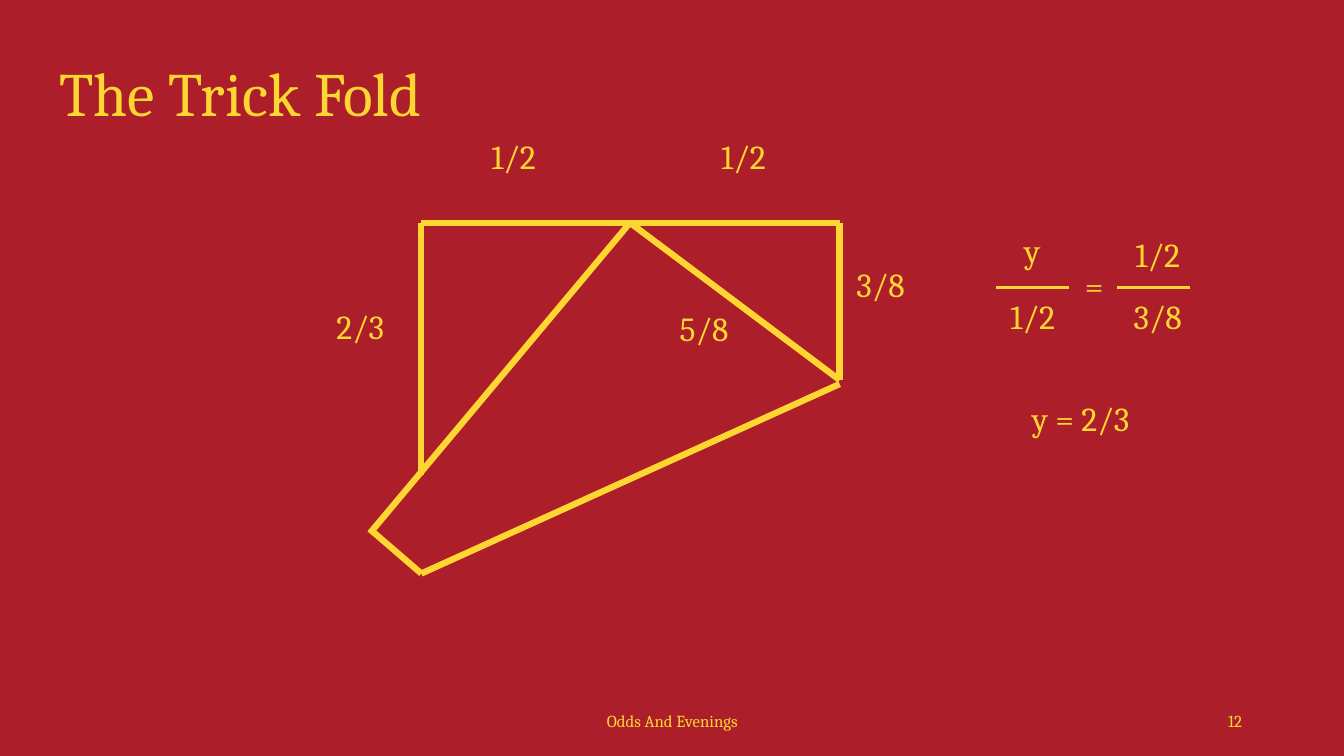
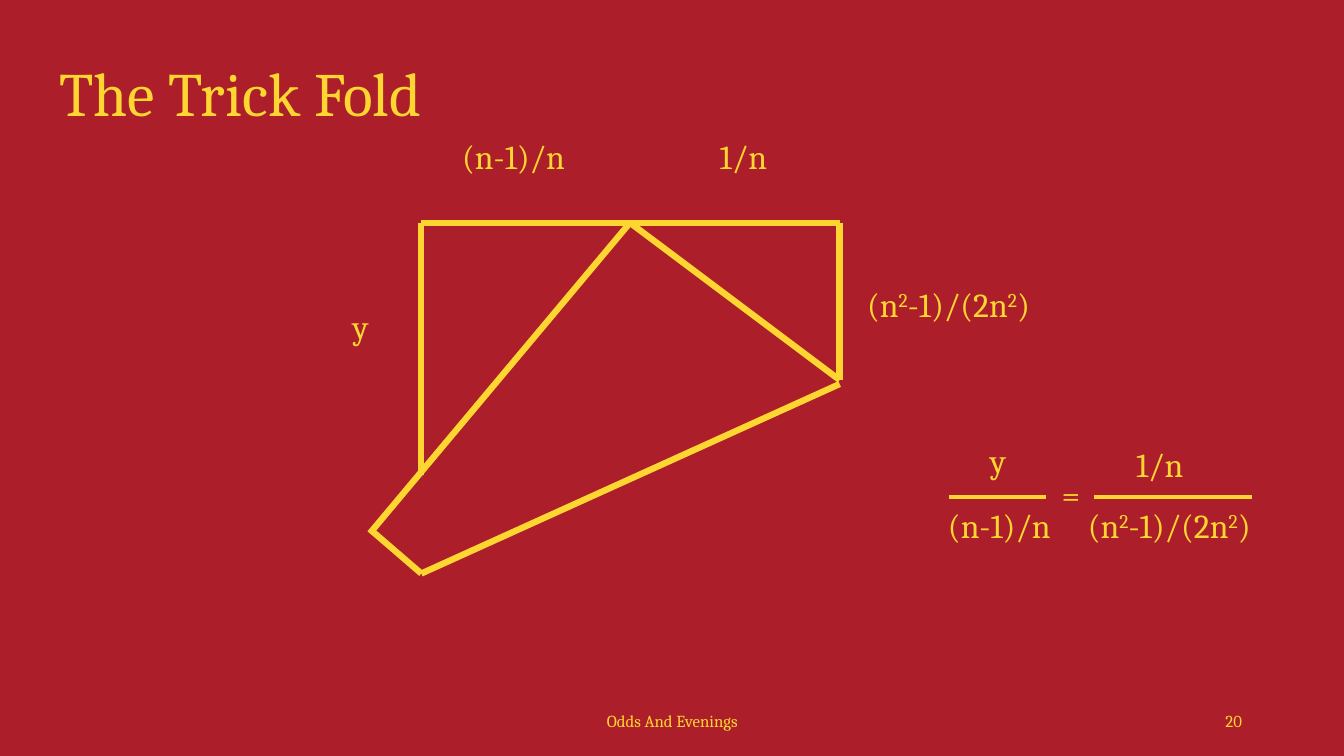
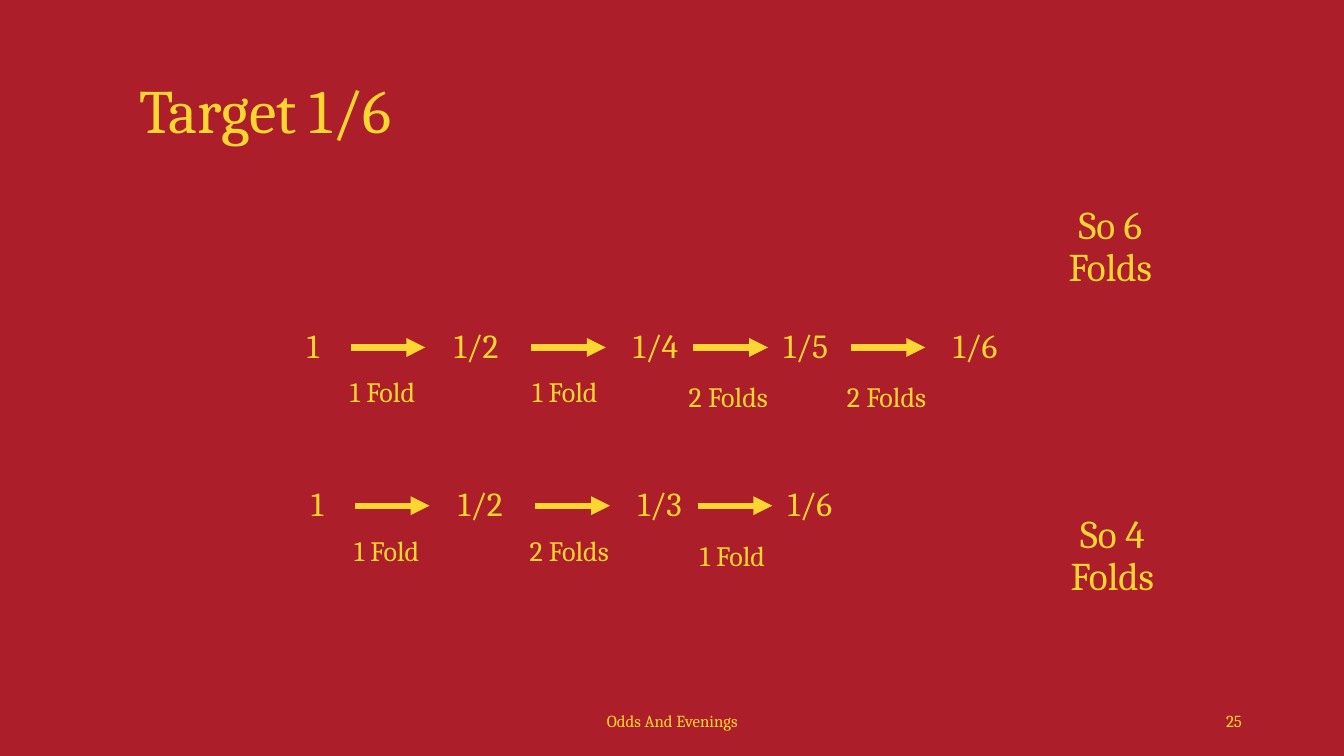
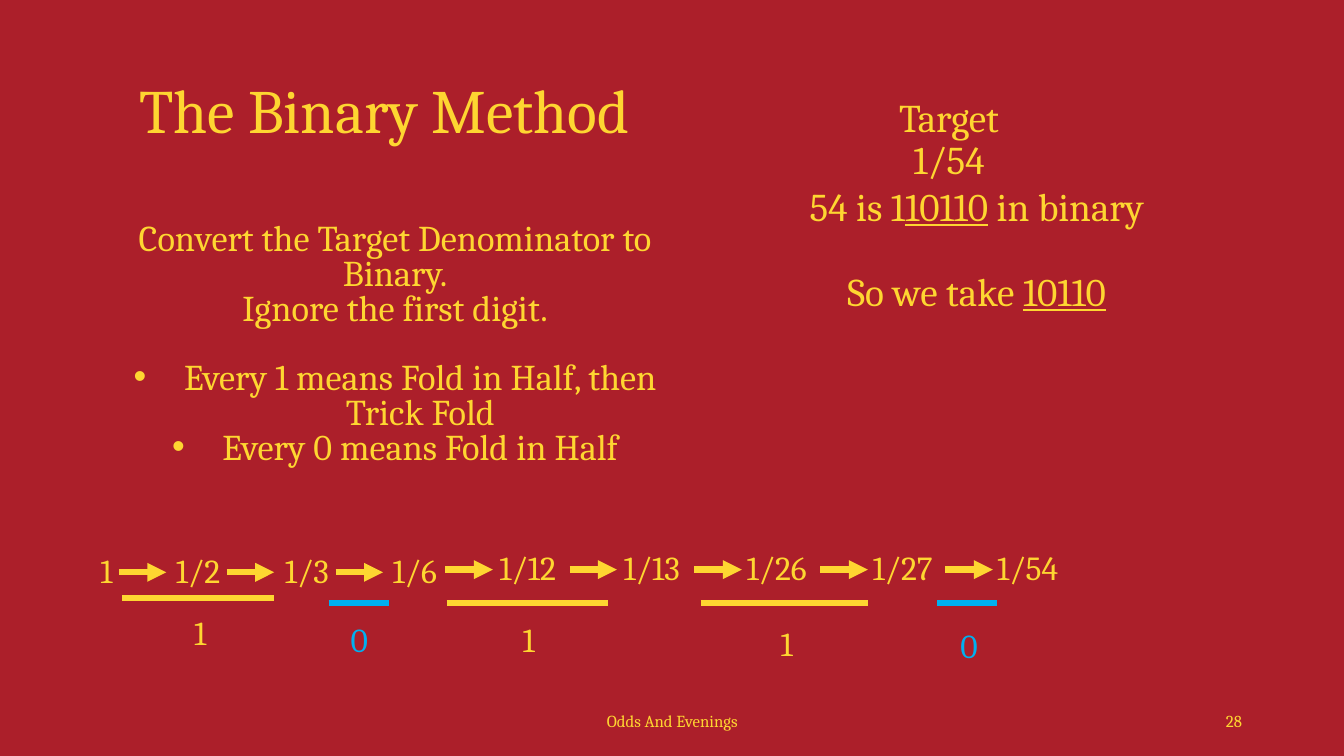
from dataclasses import dataclass
from typing import Any, NamedTuple

from lxml.etree import SubElement
from pptx import Presentation
from pptx.dml.color import RGBColor
from pptx.enum.shapes import MSO_CONNECTOR
from pptx.enum.text import MSO_ANCHOR, PP_ALIGN
from pptx.oxml.ns import qn
from pptx.slide import Slide
from pptx.text.text import TextFrame
from pptx.util import Pt


@dataclass(frozen=True)
class Theme:
    """Colours, font, type sizes and line weights of the deck."""

    background: RGBColor = RGBColor(0xAC, 0x1F, 0x2A)
    gold: RGBColor = RGBColor(0xFE, 0xD6, 0x31)
    blue: RGBColor = RGBColor(0x00, 0xB0, 0xF0)
    font: str = "Cambria"
    title: float = 44
    statement: float = 28
    rules: float = 25.9
    label: float = 24
    caption: float = 20
    footer: float = 12
    heavy: float = 4.5
    thin: float = 2.25


THEME = Theme()


class Box(NamedTuple):
    """A rectangle in points."""

    left: float
    top: float
    width: float
    height: float


class Run(NamedTuple):
    """A piece of text in one style."""

    text: str
    underline: bool = False
    superscript: bool = False


@dataclass(frozen=True)
class Line:
    """A paragraph with its spacing and bullet."""

    runs: tuple[Run, ...]
    space_before: float = 0
    bullet: bool = False


@dataclass(frozen=True)
class Style:
    """How a block of text is set."""

    size: float = THEME.label
    color: RGBColor = THEME.gold
    align: PP_ALIGN = PP_ALIGN.CENTER
    spacing: float = 0.9


class Label(NamedTuple):
    """Text centred on a point."""

    text: str | tuple[Run, ...]
    x: float
    y: float
    style: Style = Style()
    width: float = 108.72


class Fraction(NamedTuple):
    """A numerator and denominator around a bar."""

    numerator: str
    denominator: str | tuple[Run, ...]
    left: float
    right: float
    numerator_x: float
    denominator_x: float
    rise: float = 22


class Step(NamedTuple):
    """One value of a chain, with the left end of the arrow after it."""

    value: str
    x: float
    arrow_left: float | None = None


class Digit(NamedTuple):
    """A bar under some folds and the binary digit they stand for."""

    text: str
    left: float
    right: float
    bar_y: float
    x: float
    y: float
    color: RGBColor = THEME.gold


FOOTER_BOX = Box(318.24, 500.4, 324, 28.8)
NUMBER_BOX = Box(678.24, 500.4, 216, 28.8)
FOLD_TITLE_BOX = Box(35.28, 16.56, 328.32, 104.4)
METHOD_TITLE_BOX = Box(92.16, 28.8, 460.08, 104.4)
LABEL_HEIGHT = 104.4
CAPTION = Style(THEME.caption)
STATEMENT = Style(THEME.statement)
SIDE_LENGTH = (
    Run("(n"),
    Run("2", superscript=True),
    Run("-1)/(2n"),
    Run("2", superscript=True),
    Run(")"),
)


def set_values(target: Any, values: dict[str, Any]) -> None:
    """Set each named attribute of the target."""
    for name, value in values.items():
        setattr(target, name, value)


def add_bullet(paragraph: Any) -> None:
    """Give a paragraph a hanging bullet."""
    properties = paragraph._p.get_or_add_pPr()
    properties.set("marL", str(Pt(36)))
    properties.set("indent", str(Pt(-36)))
    SubElement(properties, qn("a:buFont")).set("typeface", "Arial")
    SubElement(properties, qn("a:buChar")).set("char", "•")


def fill_text(frame: TextFrame, lines: tuple[Line, ...], style: Style) -> None:
    """Write styled lines into a text frame."""
    set_values(frame, {"word_wrap": True, "vertical_anchor": MSO_ANCHOR.MIDDLE})
    for index, line in enumerate(lines):
        paragraph = frame.add_paragraph() if index else frame.paragraphs[0]
        set_values(paragraph, {
            "alignment": style.align,
            "line_spacing": style.spacing,
            "space_before": Pt(line.space_before),
        })
        if line.bullet:
            add_bullet(paragraph)
        for piece in line.runs:
            run = paragraph.add_run()
            run.text = piece.text
            set_values(run.font, {"name": THEME.font, "size": Pt(style.size)})
            run.font.color.rgb = style.color
            if piece.underline:
                run.font.underline = True
            if piece.superscript:
                run.font._element.set("baseline", "30000")


def add_text(slide: Slide, box: Box, lines: tuple[Line, ...], style: Style) -> None:
    """Add a text box."""
    shape = slide.shapes.add_textbox(*map(Pt, box))
    fill_text(shape.text_frame, lines, style)


def add_label(slide: Slide, label: Label) -> None:
    """Add a label around its centre."""
    runs = (Run(label.text),) if isinstance(label.text, str) else label.text
    box = Box(label.x - label.width / 2, label.y - LABEL_HEIGHT / 2, label.width, LABEL_HEIGHT)
    add_text(slide, box, (Line(runs),), label.style)


def add_line(
    slide: Slide,
    start: tuple[float, float],
    end: tuple[float, float],
    color: RGBColor = THEME.gold,
    weight: float = THEME.heavy,
    arrow: bool = False,
) -> None:
    """Draw a straight line, with an arrowhead at its end if asked."""
    connector = slide.shapes.add_connector(MSO_CONNECTOR.STRAIGHT, *map(Pt, (*start, *end)))
    connector.line.width = Pt(weight)
    connector.line.color.rgb = color
    if arrow:
        SubElement(connector.line._get_or_add_ln(), qn("a:tailEnd")).set("type", "triangle")
    SubElement(connector._element.spPr, qn("a:effectLst"))


def add_slide(presentation: Any, title: str, title_box: Box, number: int) -> Slide:
    """Add a slide with its title, footer and number."""
    slide = presentation.slides.add_slide(presentation.slide_layouts[5])
    heading = slide.shapes.title
    set_values(heading, dict(zip(title_box._fields, map(Pt, title_box))))
    fill_text(heading.text_frame, (Line((Run(title),)),), Style(THEME.title, align=PP_ALIGN.LEFT))
    for text, box, align in (
        ("Odds And Evenings", FOOTER_BOX, PP_ALIGN.CENTER),
        (str(number), NUMBER_BOX, PP_ALIGN.RIGHT),
    ):
        add_text(slide, box, (Line((Run(text),)),), Style(THEME.footer, align=align, spacing=1.0))
    return slide


def add_folded_sheet(slide: Slide) -> None:
    """Draw the outline of the folded sheet."""
    left, middle, right, top = 300.96, 450, 599.76, 159.12
    apex, crease = (middle, top), (right, 271.44)
    bottom = (left, 409.68)
    for start, end in (
        (apex, crease),
        (apex, (264.24, 380.88)),
        ((right, 274.32), bottom),
        (bottom, (264.24, 378)),
        ((left, top), (left, 339.12)),
        ((left, top), (right, top)),
        ((right, top), crease),
    ):
        add_line(slide, start, end)


def add_equation(
    slide: Slide, fractions: tuple[Fraction, ...], equals_x: float, y: float
) -> None:
    """Set two fractions equal to each other."""
    add_label(slide, Label("=", equals_x, y))
    for fraction in fractions:
        add_label(slide, Label(fraction.numerator, fraction.numerator_x, y - fraction.rise))
        add_label(slide, Label(fraction.denominator, fraction.denominator_x, y + 22, width=160))
        add_line(slide, (fraction.left, y), (fraction.right, y), weight=THEME.thin)


def add_chain(
    slide: Slide, steps: tuple[Step, ...], y: float, arrow_length: float, shift: float = 0
) -> None:
    """Draw a row of values joined by arrows."""
    for step in steps:
        add_label(slide, Label(step.value, step.x + shift, y))
        if step.arrow_left is not None:
            start = step.arrow_left + shift
            add_line(slide, (start, y), (start + arrow_length, y), arrow=True)


def build_half_fold(presentation: Any) -> None:
    """Build the trick fold with numbers."""
    slide = add_slide(presentation, "The Trick Fold", FOLD_TITLE_BOX, 12)
    add_folded_sheet(slide)
    for label in (
        Label("1/2", 366.84, 113.4),
        Label("1/2", 531, 113.4),
        Label("2/3", 257.4, 234.36),
        Label("3/8", 628.92, 204.84),
        Label("5/8", 502.92, 235.8),
        Label("y = 2/3", 771.84, 300.6),
    ):
        add_label(slide, label)
    add_equation(slide, (
        Fraction("y", "1/2", 711.36, 763.92, 737.28, 737.64, 24.5),
        Fraction("1/2", "3/8", 797.76, 850.32, 826.92, 826.92),
    ), 781.56, 205.2)


def build_general_fold(presentation: Any) -> None:
    """Build the trick fold for any n."""
    slide = add_slide(presentation, "The Trick Fold", FOLD_TITLE_BOX, 20)
    add_folded_sheet(slide)
    for label in (
        Label("(n-1)/n", 366.84, 113.4),
        Label("1/n", 531, 113.4),
        Label("y", 257.4, 234.36),
        Label(SIDE_LENGTH, 677.52, 219.24, width=152.64),
    ):
        add_label(slide, label)
    add_equation(slide, (
        Fraction("y", "(n-1)/n", 678.24, 747.36, 712.8, 713.88, 24.5),
        Fraction("1/n", SIDE_LENGTH, 781.2, 894.24, 828.36, 835.2),
    ), 765, 354.96)


def build_target(presentation: Any) -> None:
    """Build the two ways to reach one sixth."""
    slide = add_slide(presentation, "Target 1/6", METHOD_TITLE_BOX, 25)
    value_centers = (223.56, 340.2, 468.36, 575.64, 696.6)
    arrow_lefts = (250.56, 379.44, 495.36, 607.68)
    captions_at = ((273.24, 33), (403.56, 33), (520.2, 36.6), (633.24, 36.6))
    for values, folds, y, shift in (
        (("1", "1/2", "1/4", "1/5", "1/6"), ("1 Fold", "1 Fold", "2 Folds", "2 Folds"), 248.2, 0),
        (("1", "1/2", "1/3", "1/6"), ("1 Fold", "2 Folds", "1 Fold"), 361.24, 3),
    ):
        arrows = (*arrow_lefts[:len(folds)], None)
        steps = tuple(map(Step, values, value_centers, arrows))
        add_chain(slide, steps, y, 53.28, shift)
        for text, (x, drop) in zip(folds, captions_at):
            add_label(slide, Label(text, x + shift, y + drop, CAPTION))
    add_label(slide, Label("So 6 Folds", 793.08, 176.76, STATEMENT))
    add_label(slide, Label("So 4 Folds", 794.52, 397.8, STATEMENT))


def build_binary_method(presentation: Any) -> None:
    """Build the binary method with its worked example."""
    slide = add_slide(presentation, "The Binary Method", METHOD_TITLE_BOX, 28)
    add_label(slide, Label("Target 1/54", 677.88, 100.44, STATEMENT))
    kept_digits = Run("10110", underline=True)
    add_text(slide, Box(495.36, 112.32, 404.64, 133.8), (
        Line((Run("54 is 1"), kept_digits, Run(" in binary"))),
        Line((Run("So we take "), kept_digits), space_before=30.4),
    ), STATEMENT)
    add_text(slide, Box(84.24, 150.48, 396, 192.96), (
        Line((Run("Convert the Target Denominator to Binary."),)),
        Line((Run("Ignore the first digit."),)),
        Line((Run("Every 1 means Fold in Half, then Trick Fold"),), 24.8, True),
        Line((Run("Every 0 means Fold in Half"),), bullet=True),
    ), Style(THEME.rules, spacing=0.8))
    add_chain(slide, (
        Step("1", 75.96, 84.96),
        Step("1/2", 141.48, 162),
        Step("1/3", 219.24, 239.76),
        Step("1/6", 296.28),
    ), 408.8, 33.84)
    add_line(slide, (318.24, 406.9), (352.08, 406.9), arrow=True)
    add_chain(slide, (
        Step("1/12", 376.92, 406.8),
        Step("1/13", 465.48, 496.08),
        Step("1/26", 554.76, 586.08),
        Step("1/27", 644.76, 675.36),
        Step("1/54", 734.04),
    ), 406.9, 33.84)
    for digit in (
        Digit("1", 87.12, 195.84, 426.96, 142.92, 453.24),
        Digit("0", 234.72, 277.92, 430.56, 256.68, 458.28, THEME.blue),
        Digit("1", 318.96, 434.16, 430.56, 377.64, 458.28),
        Digit("1", 500.4, 619.92, 430.56, 561.96, 461.16),
        Digit("0", 669.6, 712.08, 430.56, 692.28, 462.6, THEME.blue),
    ):
        add_line(slide, (digit.left, digit.bar_y), (digit.right, digit.bar_y), digit.color)
        add_label(slide, Label(digit.text, digit.x, digit.y, Style(color=digit.color)))


def main() -> None:
    """Build and save the deck."""
    presentation = Presentation()
    set_values(presentation, {"slide_width": Pt(960), "slide_height": Pt(540)})
    background = presentation.slide_master.background.fill
    background.solid()
    background.fore_color.rgb = THEME.background
    for build in (build_half_fold, build_general_fold, build_target, build_binary_method):
        build(presentation)
    presentation.save("out.pptx")


if __name__ == "__main__":
    main()
